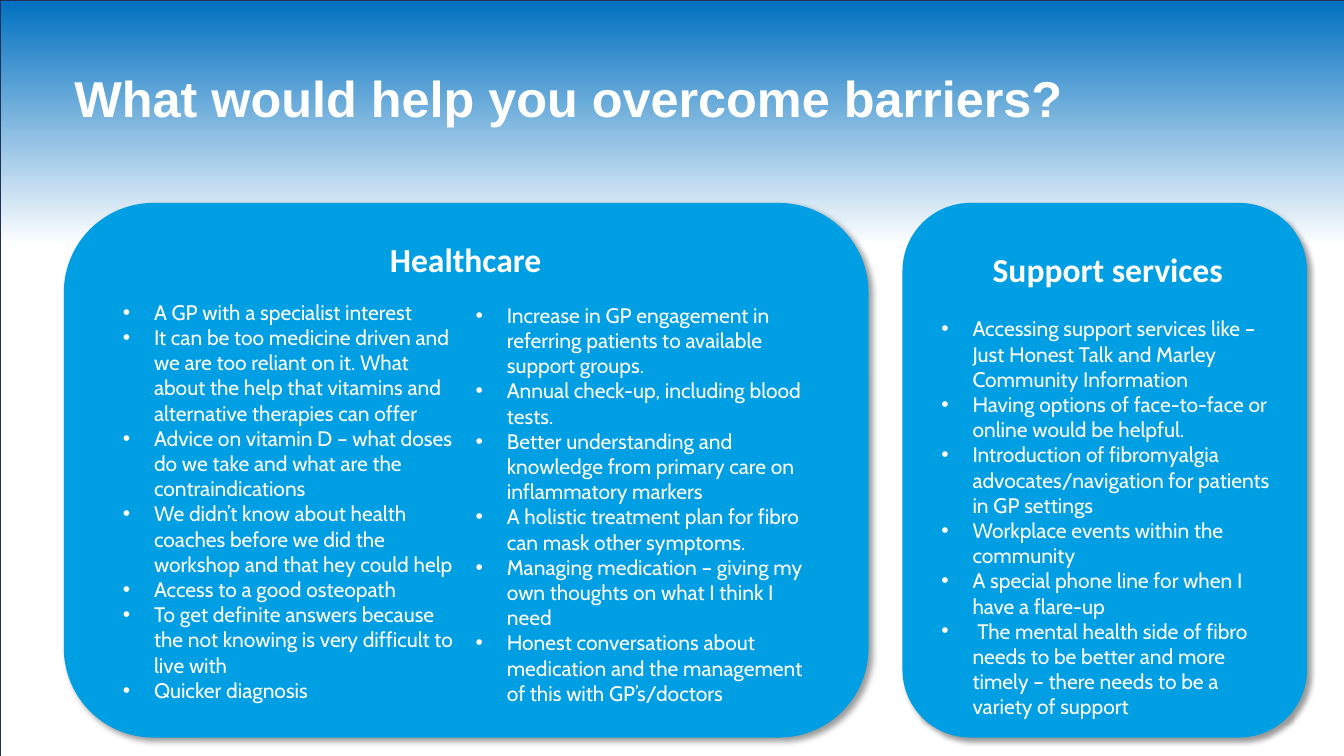
from dataclasses import dataclass

from lxml import etree
from pptx import Presentation
from pptx.dml.color import RGBColor
from pptx.enum.shapes import MSO_SHAPE
from pptx.enum.text import MSO_ANCHOR, MSO_AUTO_SIZE, PP_ALIGN
from pptx.oxml.ns import qn
from pptx.util import Inches, Pt

RECTANGLE = MSO_SHAPE.RECTANGLE
ROUNDED = MSO_SHAPE.ROUNDED_RECTANGLE
MIDDLE = MSO_ANCHOR.MIDDLE
GROW = MSO_AUTO_SIZE.SHAPE_TO_FIT_TEXT
NO_FIT = MSO_AUTO_SIZE.NONE
LEFT, CENTER = PP_ALIGN.LEFT, PP_ALIGN.CENTER

GRID_COLUMNS, GRID_ROWS = 40, 30


@dataclass(frozen=True)
class Theme:
    white: str = "FFFFFF"
    sky: str = "0070C0"
    panel: str = "009FE3"
    edge: str = "1E3256"
    shadow: str = "000000"
    title_format = {"name": "Arial", "size": Pt(36), "bold": True}
    heading_format = {"name": "Calibri", "size": Pt(24), "bold": True}
    bullet_format = {"name": "Cabin", "size": Pt(15), "bold": False}
    bullet_indent = Inches(0.31)


class SlideBuilder:
    def __init__(self, presentation, theme):
        self.theme = theme
        self.column = presentation.slide_width / GRID_COLUMNS
        self.row = presentation.slide_height / GRID_ROWS
        self.slide = presentation.slides.add_slide(presentation.slide_layouts[6])

    def place(self, left, top, width, height):
        """Turn grid columns and rows into slide lengths."""
        return (round(left * self.column), round(top * self.row),
                round(width * self.column), round(height * self.row))

    def block(self, kind, area, line_color):
        shape = self.slide.shapes.add_shape(kind, *self.place(*area))
        shape.shadow.inherit = False
        shape.line.color.rgb = RGBColor.from_string(line_color)
        shape.line.width = Pt(1)
        return shape

    def backdrop(self, area):
        fill = self.block(RECTANGLE, area, self.theme.edge).fill
        fill.gradient()
        fill.gradient_angle = 270
        stops = ((0, self.theme.sky), (0.31, self.theme.white))
        for stop, (position, color) in zip(fill.gradient_stops, stops):
            stop.position = position
            stop.color.rgb = RGBColor.from_string(color)

    def panel(self, area):
        shape = self.block(ROUNDED, area, self.theme.panel)
        shape.fill.solid()
        shape.fill.fore_color.rgb = RGBColor.from_string(self.theme.panel)
        effects = shape._element.spPr.find(qn("a:effectLst"))
        shadow = etree.SubElement(
            effects, qn("a:outerShdw"), blurRad=str(Pt(4)), dist=str(Pt(3)),
            dir=str(45 * 60000), algn="tl", rotWithShape="0")
        color = etree.SubElement(shadow, qn("a:srgbClr"), val=self.theme.shadow)
        etree.SubElement(color, qn("a:alpha"), val="40000")

    def text_box(self, area, auto_size=GROW):
        frame = self.slide.shapes.add_textbox(*self.place(*area)).text_frame
        frame.word_wrap = True
        frame.auto_size = auto_size
        return frame

    def add_text(self, paragraph, text, text_format, alignment=LEFT):
        paragraph.alignment = alignment
        run = paragraph.add_run()
        run.text = text
        for attribute, value in text_format.items():
            setattr(run.font, attribute, value)
        run.font.color.rgb = RGBColor.from_string(self.theme.white)

    def title(self, area, text):
        frame = self.text_box(area, NO_FIT)
        frame.vertical_anchor = MIDDLE
        frame.paragraphs[0].line_spacing = 0.9
        self.add_text(frame.paragraphs[0], text, self.theme.title_format)

    def bullets(self, area, items=(), heading=None):
        """Fill a box with an optional heading and a bullet list."""
        frame = self.text_box(area)
        paragraph = frame.paragraphs[0]
        if heading:
            self.add_text(paragraph, heading, self.theme.heading_format, CENTER)
            if items:
                paragraph.space_after = Pt(19)
        for index, item in enumerate(items):
            if heading or index:
                paragraph = frame.add_paragraph()
            properties = paragraph._p.get_or_add_pPr()
            properties.set("marL", str(self.theme.bullet_indent))
            properties.set("indent", str(-self.theme.bullet_indent))
            etree.SubElement(properties, qn("a:buFont"), typeface="Arial")
            etree.SubElement(properties, qn("a:buChar"), char="•")
            self.add_text(paragraph, item, self.theme.bullet_format)


SUPPORT = (
    "Accessing support services like – Just Honest Talk and Marley Community Information",
    "Having options of face-to-face or online would be helpful.",
    "Introduction of fibromyalgia advocates/navigation for patients in GP settings",
    "Workplace events within the community",
    "A special phone line for when I have a flare-up",
    " The mental health side of fibro needs to be better and more timely – "
    "there needs to be a variety of support",
)
HEALTHCARE_LEFT = (
    "A GP with a specialist interest",
    "It can be too medicine driven and we are too reliant on it. What about "
    "the help that vitamins and alternative therapies can offer",
    "Advice on vitamin D – what doses do we take and what are the contraindications",
    "We didn’t know about health coaches before we did the workshop and that hey could help",
    "Access to a good osteopath",
    "To get definite answers because the not knowing is very difficult to live with",
    "Quicker diagnosis",
)
HEALTHCARE_RIGHT = (
    "Increase in GP engagement in referring patients to available support groups.",
    "Annual check-up, including blood tests.",
    "Better understanding and knowledge from primary care on inflammatory markers",
    "A holistic treatment plan for fibro can mask other symptoms.",
    "Managing medication – giving my own thoughts on what I think I need",
    "Honest conversations about medication and the management of this with GP’s/doctors",
)


def main():
    presentation = Presentation()
    presentation.slide_width = Inches(13.33)
    presentation.slide_height = Inches(7.5)
    builder = SlideBuilder(presentation, Theme())

    # Backdrop and title
    builder.backdrop((0, 0, 41.07, 31.44))
    builder.title((1.92, 1.12, 38.37, 5.8), "What would help you overcome barriers?")

    # Panels
    panel_top, panel_height = 8.08, 21.16
    for left, width in ((1.92, 23.91), (26.88, 12)):
        builder.panel((left, panel_top, width, panel_height))

    # Headings and lists, all in boxes of one width
    text_width = 10.5
    list_left = 3.36
    builder.bullets((8.61, 9.28, text_width, 2), heading="Healthcare")
    builder.bullets((27.72, 9.68, text_width, 19.24), SUPPORT, "Support services")
    builder.bullets((list_left + text_width, 11.8, text_width, 16.56), HEALTHCARE_RIGHT)
    builder.bullets((list_left, 11.68, text_width, 17.56), HEALTHCARE_LEFT)

    presentation.save("out.pptx")


if __name__ == "__main__":
    main()
